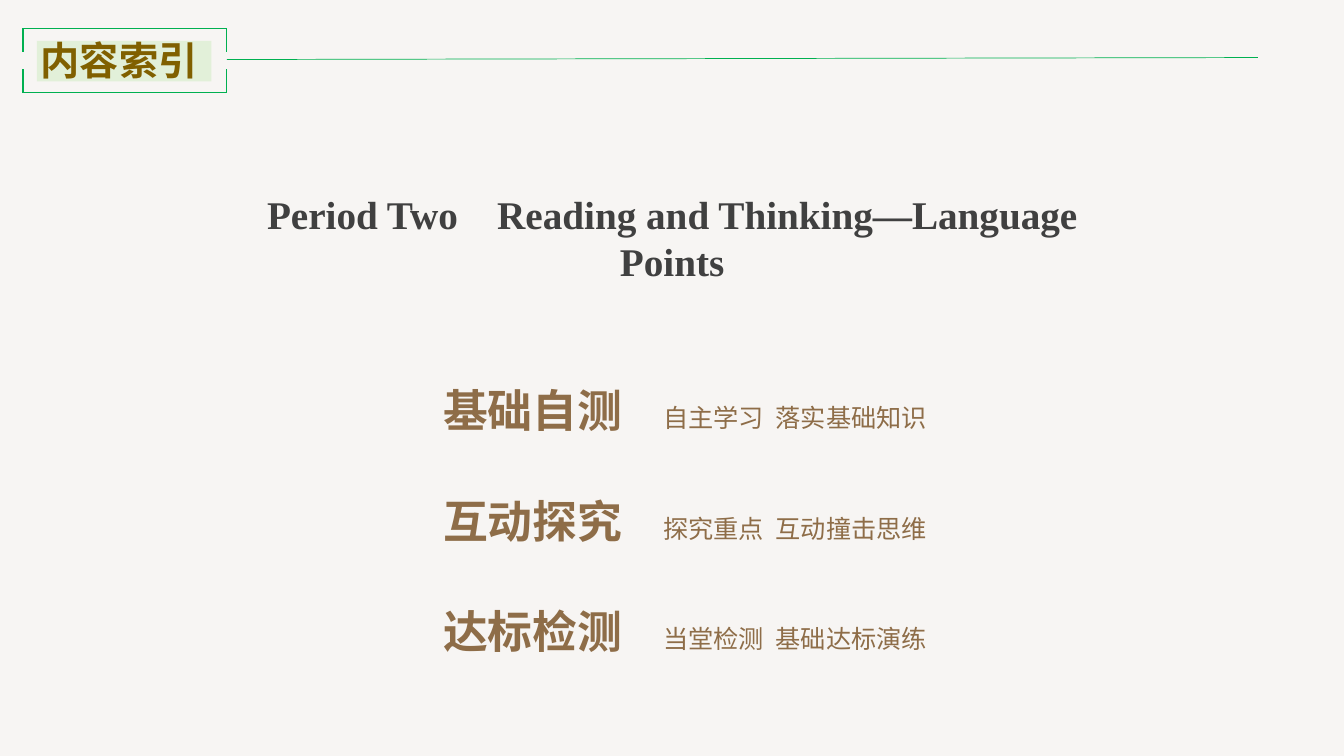
import lxml.etree
import pptx
import pptx.dml.color
import pptx.enum.shapes
import pptx.enum.text
import pptx.oxml.ns
import pptx.util

Cm = pptx.util.Cm
GREEN = "00B050"
BROWN = "8E6D48"
HEADING = {"size": pptx.util.Pt(28), "bold": True}
TOPIC = {"size": pptx.util.Pt(32), "bold": True}
DETAIL = {"size": pptx.util.Pt(18), "bold": False}
SECTIONS = [
    ("基础自测", "自主学习", "落实基础知识"),
    ("互动探究", "探究重点", "互动撞击思维"),
    ("达标检测", "当堂检测", "基础达标演练"),
]


def color(value):
    return pptx.dml.color.RGBColor.from_string(value)


def add_element(parent, tag, **attributes):
    element = lxml.etree.SubElement(parent, pptx.oxml.ns.qn(tag))
    for name, value in attributes.items():
        element.set(name, str(value))
    return element


def add_rectangle(slide, left, top, width, height, fill, opacity=100):
    shape = slide.shapes.add_shape(
        pptx.enum.shapes.MSO_SHAPE.RECTANGLE, Cm(left), Cm(top), Cm(width), Cm(height))
    shape.shadow.inherit = False
    shape.fill.solid()
    shape.fill.fore_color.rgb = color(fill)
    shape.line.fill.background()
    if opacity < 100:
        fill_color = shape.fill._xPr.find(".//" + pptx.oxml.ns.qn("a:srgbClr"))
        add_element(fill_color, "a:alpha", val=opacity * 1000)


def add_line(shapes, start, end, width):
    line = shapes.add_connector(
        pptx.enum.shapes.MSO_CONNECTOR.STRAIGHT,
        *[Cm(value) for value in (*start, *end)])
    line.line.color.rgb = color(GREEN)
    line.line.width = pptx.util.Pt(width)
    add_element(line._element.spPr, "a:effectLst")


def add_text_box(slide, left, top, width, height):
    box = slide.shapes.add_textbox(Cm(left), Cm(top), Cm(width), Cm(height))
    box.text_frame.word_wrap = True
    return box.text_frame


def add_run(paragraph, text, text_color, latin, east_asian, formats):
    run = paragraph.add_run()
    run.text = text
    run.font.color.rgb = color(text_color)
    run.font.name = latin
    for name, value in formats.items():
        setattr(run.font, name, value)
    add_element(run._r.get_or_add_rPr(), "a:ea", typeface=east_asian)


def add_header(slide, left, top, width, height):
    right, bottom = left + width, top + height
    tick = 0.6
    frame = slide.shapes.add_group_shape()
    for edge, direction in ((top, 1), (bottom, -1)):
        add_line(frame.shapes, (left, edge), (right, edge), 0.75)
        for side in (left, right):
            add_line(frame.shapes, (side, edge), (side, edge + direction * tick), 0.75)
    add_rectangle(slide, left + 0.35, top + 0.32, 4.4, 1.02, "E2F0D9")
    label = add_text_box(slide, left + 0.2, top + 0.08, 6.55, 1.45)
    add_run(label.paragraphs[0], "内容索引", "806000",
            "Noto Sans CJK SC", "Noto Sans CJK SC", HEADING)
    add_line(slide.shapes, (right, top + 0.79), (right + 25.98, top + 0.74), 0.5)


def add_title(slide, left, top, width, height):
    frame = add_text_box(slide, left, top, width, height)
    frame.margin_left = frame.margin_right = Cm(0.8)
    paragraph = frame.paragraphs[0]
    paragraph.alignment = pptx.enum.text.PP_ALIGN.CENTER
    add_run(paragraph, "Period Two　Reading and Thinking—Language Points", "404040",
            "Times New Roman", "Times New Roman", HEADING)


def add_sections(slide, left, top, width, pitch):
    for index, (topic, action, goal) in enumerate(SECTIONS):
        frame = add_text_box(slide, left, top + index * pitch, width, 1.62)
        paragraph = frame.paragraphs[0]
        tabs = add_element(paragraph._p.get_or_add_pPr(), "a:tabLst")
        for position in (5.54, 8.38):
            add_element(tabs, "a:tab", pos=Cm(position), algn="l")
        for text, formats in ((topic, TOPIC), (f"\t{action}\t{goal}", DETAIL)):
            add_run(paragraph, text, BROWN, "Arial", "Noto Sans CJK SC", formats)


def main():
    presentation = pptx.Presentation()
    presentation.slide_width = Cm(33.87)
    presentation.slide_height = Cm(19.05)
    slide = presentation.slides.add_slide(presentation.slide_layouts[6])
    add_rectangle(slide, 0, 0, 33.87, 19.05, "F4F0ED", 66)
    add_title(slide, 4.9, 4.67, 24.08, 1.45)
    add_sections(slide, 10.92, 9.52, 13.77, 2.79)
    add_header(slide, 0.58, 0.71, 5.14, 1.63)
    presentation.save("out.pptx")


if __name__ == "__main__":
    main()
